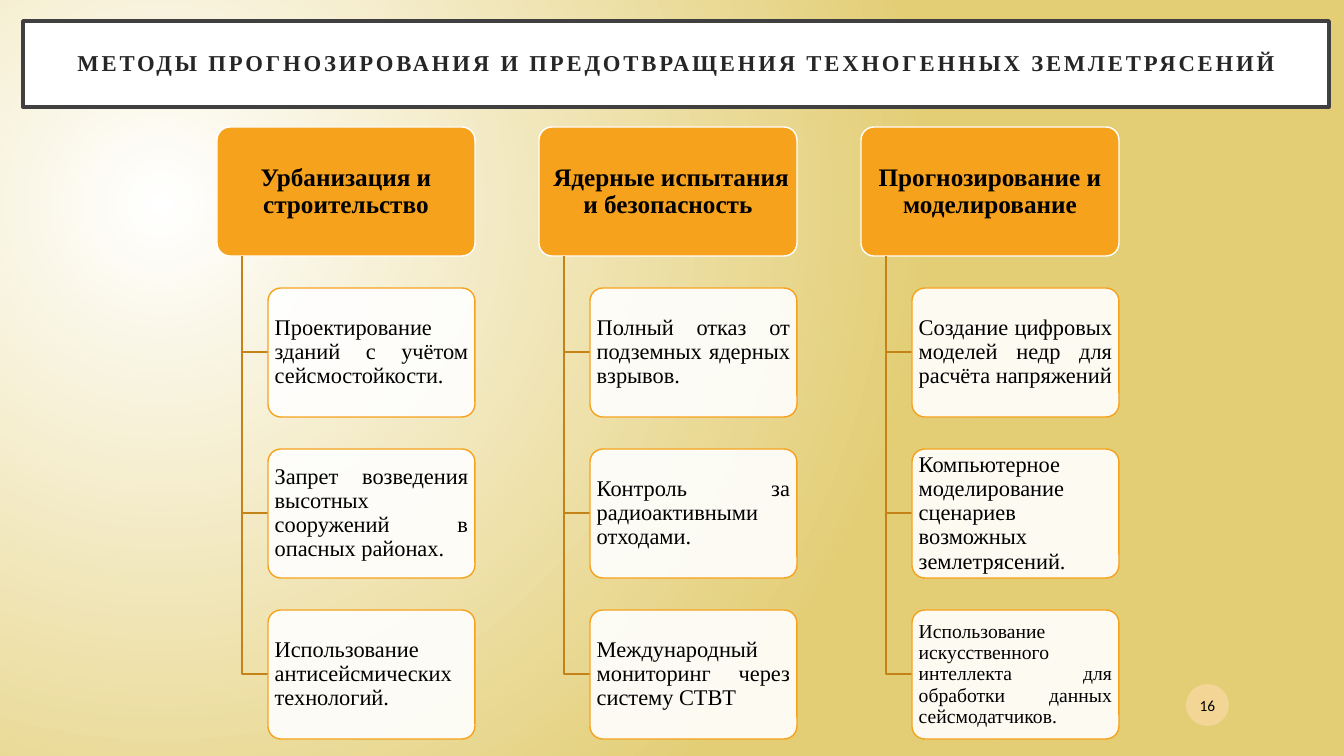
from lxml.etree import SubElement
from pptx import Presentation
from pptx.dml.color import RGBColor
from pptx.enum.shapes import MSO_SHAPE
from pptx.enum.text import MSO_ANCHOR, MSO_AUTO_SIZE, PP_ALIGN
from pptx.oxml import parse_xml
from pptx.oxml.ns import nsdecls, qn
from pptx.util import Pt

WIDE, HIGH = 1344, 756
PX = 12192000 / WIDE

HUES = {
    "white": "FFFFFF", "sand": "E3CE76", "frame": "404040", "title": "262626",
    "amber": "F6A21D", "wire": "C58217", "badge": "FBDAA5", "ink": "000000",
}
SERIF = "Times New Roman"
FONTS = {
    "title": {"name": SERIF, "size": Pt(16.2), "bold": True},
    "head": {"name": SERIF, "size": Pt(18), "bold": True},
    "leaf": {"name": SERIF, "size": Pt(16)},
    "small": {"name": SERIF, "size": Pt(14)},
    "badge": {"name": "Calibri", "size": Pt(11)},
}
TITLE = "МЕТОДЫ ПРОГНОЗИРОВАНИЯ И ПРЕДОТВРАЩЕНИЯ ТЕХНОГЕННЫХ ЗЕМЛЕТРЯСЕНИЙ"
TREES = [
    ("Урбанизация и строительство", [
        ("Проектирование зданий с учётом сейсмостойкости.", "leaf"),
        ("Запрет возведения высотных сооружений в опасных районах.", "leaf"),
        ("Использование антисейсмических технологий.", "leaf")]),
    (" Ядерные испытания и безопасность", [
        ("Полный отказ от подземных ядерных взрывов.", "leaf"),
        ("Контроль за радиоактивными отходами.", "leaf"),
        ("Международный мониторинг через систему CTBT", "leaf")]),
    ("Прогнозирование и моделирование", [
        ("Создание цифровых моделей недр для расчёта напряжений", "leaf"),
        ("Компьютерное моделирование сценариев возможных землетрясений.", "leaf"),
        ("Использование искусственного интеллекта для обработки данных "
         "сейсмодатчиков.", "small")]),
]


def px(n):
    return round(n * PX)


def rgb(hue):
    return RGBColor.from_string(HUES[hue])


def apply(item, values):
    for key, value in values.items():
        setattr(item, key, value)


def place(shape, box):
    apply(shape, dict(zip(("left", "top", "width", "height"), map(px, box))))


def paint(shape, fill, line=None, width=1, alpha=None):
    shape.fill.solid()
    shape.fill.fore_color.rgb = rgb(fill)
    if alpha:
        tint = shape.fill._xPr.find(qn("a:solidFill"))[0]
        SubElement(tint, qn("a:alpha"), val=str(alpha * 1000))
    if line:
        shape.line.color.rgb = rgb(line)
        shape.line.width = Pt(width)
    else:
        shape.line.fill.background()


def write(shape, text, font, pad, align=PP_ALIGN.CENTER, hue="ink", space=0.9):
    frame = shape.text_frame
    side, edge = map(px, pad)
    apply(frame, {"word_wrap": True, "auto_size": MSO_AUTO_SIZE.NONE,
                  "vertical_anchor": MSO_ANCHOR.MIDDLE,
                  "margin_left": side, "margin_right": side,
                  "margin_top": edge, "margin_bottom": edge})
    para = frame.paragraphs[0]
    apply(para, {"alignment": align, "line_spacing": space})
    run = para.add_run()
    run.text = text
    apply(run.font, FONTS[font])
    run.font.color.rgb = rgb(hue)
    return run


def add(slide, kind, box):
    shape = slide.shapes.add_shape(kind, *map(px, box))
    shape.shadow.inherit = False
    return shape


def card(slide, box):
    shape = add(slide, MSO_SHAPE.ROUNDED_RECTANGLE, box)
    shape.adjustments[0] = 0.1
    return shape


# Background: white glow fading to sand
def backdrop(slide):
    fill = slide.background.fill
    fill.gradient()
    for stop, hue in zip(fill.gradient_stops, ("white", "sand")):
        stop.color.rgb = rgb(hue)
    grad = slide.element.find(".//" + qn("a:gradFill"))
    grad.replace(grad.find(qn("a:lin")), parse_xml(
        f'<a:path {nsdecls("a")} path="circle">'
        '<a:fillToRect l="50000" t="55000" r="125000" b="100000"/></a:path>'))


# Framed title across the top
def banner(slide, box):
    title = slide.shapes.title
    place(title, box)
    paint(title, "white", "frame", 2.5)
    run = write(title, TITLE, "title", (20, 20), hue="title")
    run.font._element.set("spc", "200")


# Elbow line from a head down to one leaf
def elbow(slide, x, top, right, low):
    pen = slide.shapes.build_freeform(px(x), px(top))
    pen.add_line_segments([(px(x), px(low)), (px(right), px(low))], close=False)
    wire = pen.convert_to_shape()
    wire.shadow.inherit = False
    wire.fill.background()
    wire.line.color.rgb = rgb("wire")
    wire.line.width = Pt(1)


# One column: a head with its leaves hung below
def tree(slide, box, name, leaves):
    x, y, wide, high = box
    tall, step, inset = 129, 161, 51
    head = card(slide, (x, y, wide, tall))
    paint(head, "amber", "white")
    write(head, name, "head", (4, 3))
    for row, (text, font) in enumerate(leaves, 1):
        top = y + row * step
        elbow(slide, x + 25, y + tall, x + inset, top + tall // 2)
        leaf = card(slide, (x + inset, top, wide - inset, tall))
        paint(leaf, "white", "amber", alpha=90)
        write(leaf, text, font, (3, 2), PP_ALIGN.JUSTIFY)


# Round page number
def badge(slide, box):
    disc = add(slide, MSO_SHAPE.OVAL, box)
    paint(disc, "badge", alpha=70)
    write(disc, "16", "badge", (2, 5), space=1.0)


def main():
    deck = Presentation()
    deck.slide_width, deck.slide_height = px(WIDE), px(HIGH)
    slide = deck.slides.add_slide(deck.slide_layouts[5])
    backdrop(slide)
    banner(slide, (23, 21, 1306, 86))
    for col, (name, leaves) in enumerate(TREES):
        tree(slide, (217 + col * 322, 127, 258, 612), name, leaves)
    badge(slide, (1186, 684, 43, 42))
    deck.save("out.pptx")


if __name__ == "__main__":
    main()
